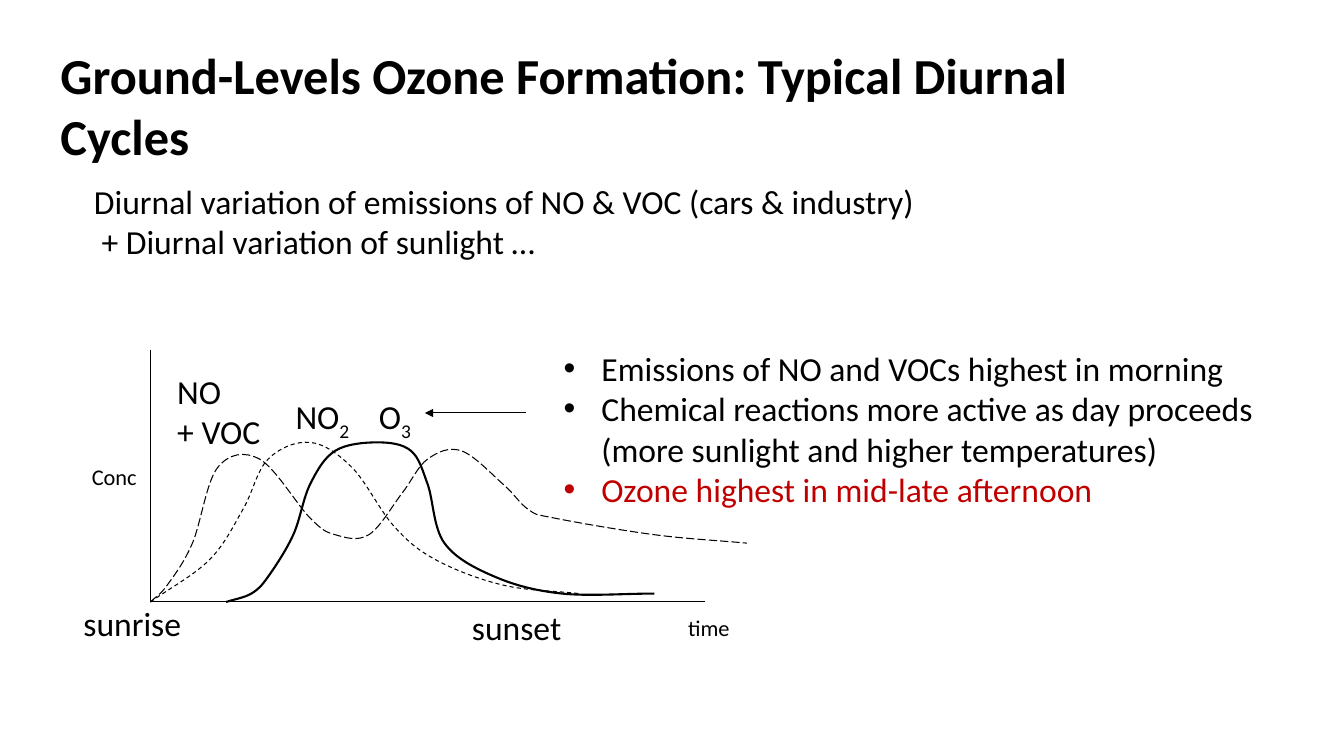
import pptx
import pptx.dml.color
import pptx.enum.dml
import pptx.enum.shapes
import pptx.enum.text
import pptx.oxml
import pptx.oxml.ns
import pptx.util

Pt = pptx.util.Pt
BLACK, RED = "000000", "C00000"
UNIT = 6  # grid step of the sketch, in points
ORIGIN_X, ORIGIN_Y = 107.5, 430


def write_text(shape, box, size, wrap, paragraphs, bold=False):
    """Place shape at box and fill it; in each paragraph, "_" precedes a subscript."""
    for name, value in zip(("left", "top", "width", "height"), box):
        setattr(shape, name, Pt(value))
    frame_format = {
        "word_wrap": wrap,
        "auto_size": pptx.enum.text.MSO_AUTO_SIZE.NONE,
        "vertical_anchor": pptx.enum.text.MSO_ANCHOR.TOP,
    }
    for name, value in frame_format.items():
        setattr(shape.text_frame, name, value)
    for index, text in enumerate(paragraphs):
        frame = shape.text_frame
        paragraph = frame.add_paragraph() if index else frame.paragraphs[0]
        paragraph.alignment = pptx.enum.text.PP_ALIGN.LEFT
        for position, part in enumerate(text.split("_")):
            run = paragraph.add_run()
            run.text = part
            font_format = {"name": "Calibri", "size": Pt(size), "bold": bold}
            for name, value in font_format.items():
                setattr(run.font, name, value)
            run.font.color.rgb = pptx.dml.color.RGBColor.from_string(BLACK)
            if position:
                run.font._element.set("baseline", "-25000")


def add_line(start, end):
    """Add a thin black connector between two (x, y) points."""
    connector = slide.shapes.add_connector(
        pptx.enum.shapes.MSO_CONNECTOR.STRAIGHT, *[Pt(value) for value in start + end]
    )
    connector.line.width = Pt(0.75)
    connector.line.color.rgb = pptx.dml.color.RGBColor.from_string(BLACK)
    connector.element.spPr.append(
        pptx.oxml.parse_xml(f'<a:effectLst {pptx.oxml.ns.nsdecls("a")}/>')
    )
    return connector


presentation = pptx.Presentation()
presentation.slide_width, presentation.slide_height = Pt(960), Pt(540)
slide = presentation.slides.add_slide(presentation.slide_layouts[5])

write_text(
    slide.shapes.title, (36, 28, 798.5, 51), 36, True,
    ["Ground-Levels Ozone Formation: Typical Diurnal Cycles"], bold=True,
)

# Axes
origin = (ORIGIN_X, ORIGIN_Y)
add_line((ORIGIN_X, ORIGIN_Y - 30 * UNIT), origin)
add_line(origin, (ORIGIN_X + 66 * UNIT, ORIGIN_Y))

# Concentration curves: knots in grid units from the origin, then width and dash
curves = [
    ([(0, 0), (2, 2), (5, 7), (8, 16), (13, 17), (19, 10), (22, 8), (26, 8),
      (30, 13), (33, 17), (37, 18), (42, 14), (45, 11), (48, 10), (60, 8), (71, 7)],
     0.75, pptx.enum.dml.MSO_LINE.LONG_DASH),
    ([(0, 0), (7, 5), (11, 11), (14, 17), (19, 19), (24, 16), (29, 9), (34, 5),
      (42, 2), (51, 1)],
     0.75, pptx.enum.dml.MSO_LINE.DASH),
    ([(9, 0), (12, 1), (14, 3), (17, 8), (19, 14), (22, 18), (27, 19), (31, 18),
      (33, 14), (35, 7), (41, 3), (49, 1), (60, 1)],
     1.5, pptx.enum.dml.MSO_LINE.SOLID),
]
for knots, width, dash in curves:
    points = [(Pt(ORIGIN_X + x * UNIT), Pt(ORIGIN_Y - y * UNIT)) for x, y in knots]
    builder = slide.shapes.build_freeform(*points[0])
    builder.add_line_segments(points[1:], close=False)
    curve = builder.convert_to_shape()
    curve.shadow.inherit = False
    curve.fill.background()
    curve.line.color.rgb = pptx.dml.color.RGBColor.from_string(BLACK)
    curve.line.width = Pt(width)
    curve.line.dash_style = dash

    # Turn each straight segment into a Bezier with Catmull-Rom handles
    local = [(x - curve.left, y - curve.top) for x, y in points]
    before = tuple(2 * a - b for a, b in zip(local[0], local[1]))
    after = tuple(2 * a - b for a, b in zip(local[-1], local[-2]))
    chain = [before] + local + [after]
    for index, segment in enumerate(curve.element.xpath(".//a:lnTo")):
        previous, start, end, following = chain[index:index + 4]
        handle_out = [s + (e - p) / 6 for p, s, e in zip(previous, start, end)]
        handle_in = [e - (f - s) / 6 for s, e, f in zip(start, end, following)]
        nodes = "".join(
            f'<a:pt x="{round(x)}" y="{round(y)}"/>'
            for x, y in (handle_out, handle_in, end)
        )
        segment.getparent().replace(segment, pptx.oxml.parse_xml(
            f'<a:cubicBezTo {pptx.oxml.ns.nsdecls("a")}>{nodes}</a:cubicBezTo>'
        ))

# Arrow pointing at the ozone label
arrow = add_line((375.5, 295), (303.5, 295))
arrow.line._get_or_add_ln().append(
    pptx.oxml.parse_xml(f'<a:tailEnd {pptx.oxml.ns.nsdecls("a")} type="triangle"/>')
)

# Text boxes: place, size, wrap, paragraphs
texts = [
    ((60, 125.5, 625, 65.5), 24, True,
     ["Diurnal variation of emissions of NO & VOC (cars & industry)",
      " + Diurnal variation of sunlight …"]),
    ((52.5, 427, 85, 36), 24, False, ["sunrise"]),
    ((330, 430, 79, 36), 24, False, ["sunset"]),
    ((58.5, 327, 47, 26.5), 16, False, ["Conc"]),
    ((484.5, 435, 44.5, 26.5), 16, False, ["time"]),
    ((119.5, 261.5, 74, 65.5), 24, False, ["NO", "+ VOC"]),
    ((204, 279.5, 54.5, 36), 24, False, ["NO_2"]),
    ((263.5, 279.5, 39.5, 36), 24, False, ["O_3"]),
]
for box, size, wrap, paragraphs in texts:
    write_text(slide.shapes.add_textbox(0, 0, 0, 0), box, size, wrap, paragraphs)

findings = slide.shapes.add_textbox(0, 0, 0, 0)
write_text(findings, (395.5, 245, 537, 124), 24, True, [
    "Emissions of NO and VOCs highest in morning",
    "Chemical reactions more active as day proceeds "
    "(more sunlight and higher temperatures)",
    "Ozone highest in mid-late afternoon",
])
for paragraph in findings.text_frame.paragraphs:
    properties = paragraph._p.get_or_add_pPr()
    properties.set("marL", str(Pt(27)))
    properties.set("indent", str(-Pt(27)))
    for bullet in ('buFont {} typeface="Arial"', 'buChar {} char="•"'):
        properties.append(pptx.oxml.parse_xml(
            f'<a:{bullet.format(pptx.oxml.ns.nsdecls("a"))}/>'
        ))
paragraph.runs[0].font.color.rgb = pptx.dml.color.RGBColor.from_string(RED)

presentation.save("out.pptx")
